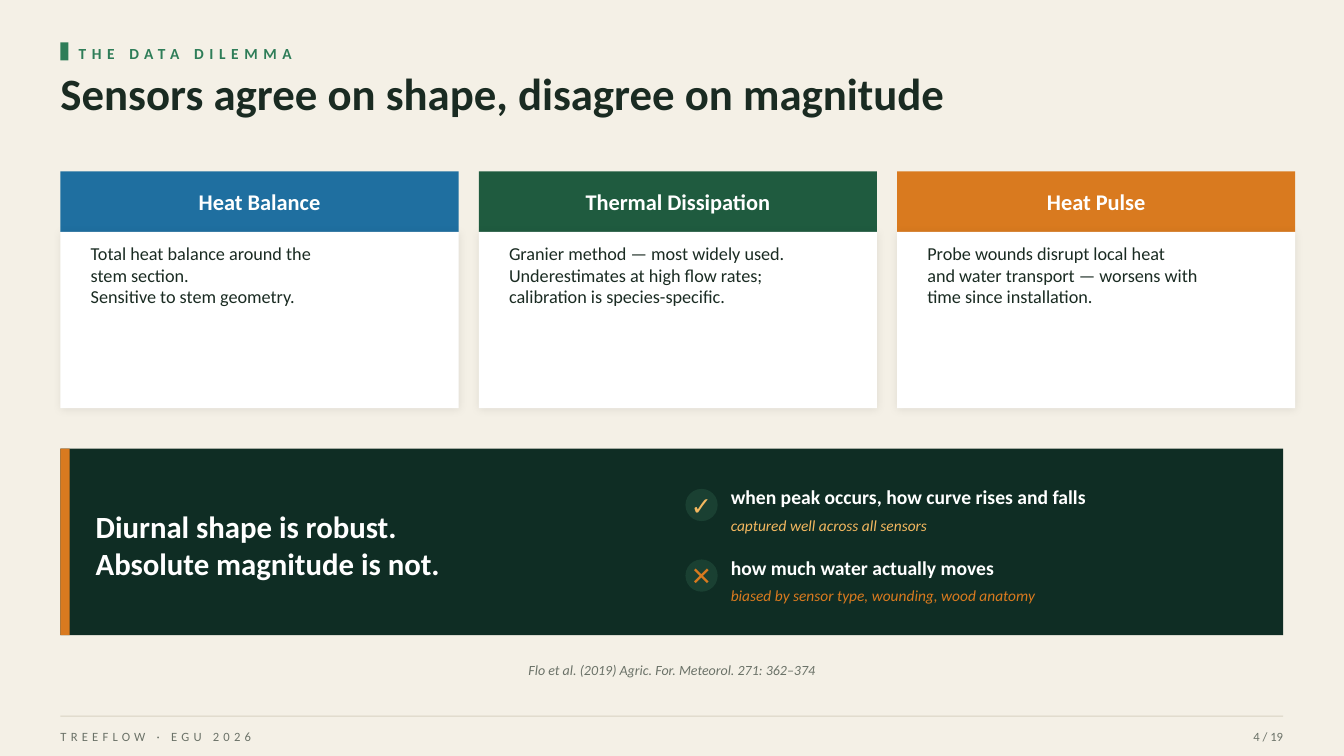
from lxml.etree import SubElement
from pptx import Presentation
from pptx.dml.color import RGBColor
from pptx.enum.shapes import MSO_SHAPE as Preset
from pptx.enum.text import MSO_ANCHOR as Anchor, MSO_AUTO_SIZE as AutoSize, PP_ALIGN as Align
from pptx.oxml.ns import qn
from pptx.util import Pt

COLOURS = {
    "paper": "F4F0E6", "ink": "1A2B22", "white": "FFFFFF", "leaf": "2E7D58",
    "blue": "1F6FA0", "forest": "1F5B3F", "orange": "D97A1F", "night": "0F2D24",
    "disc": "1A4032", "amber": "F4B860", "grey": "6B7268", "rule": "D8D2C2",
}
FONT = "Calibri"
LEFT, WIDTH = 43.2, 873.36


def add_block(left, top, width, height, colour, preset=Preset.RECTANGLE):
    block = page.shapes.add_shape(preset, Pt(left), Pt(top), Pt(width), Pt(height))
    block.shadow.inherit = False
    block.fill.solid()
    block.fill.fore_color.rgb = RGBColor.from_string(COLOURS[colour])
    block.line.fill.background()
    return block


def write(text, place=None, box=None, size=13, colour="ink", bold=False, italic=False,
          align=Align.LEFT, anchor=Anchor.MIDDLE, tracking=None):
    if box is None:
        box = page.shapes.add_textbox(*map(Pt, place))
    frame = box.text_frame
    frame.text = text
    frame.word_wrap = True
    frame.auto_size = AutoSize.NONE
    frame.vertical_anchor = anchor
    frame.margin_left = frame.margin_right = frame.margin_top = frame.margin_bottom = 0
    for para in frame.paragraphs:
        para.alignment = align
        for span in para.runs:
            span.font.name = FONT
            span.font.size = Pt(size)
            span.font.bold = bold
            span.font.italic = italic
            span.font.color.rgb = RGBColor.from_string(COLOURS[colour])
            if tracking:
                span.font._element.set("spc", str(tracking * 100))


deck = Presentation()
deck.slide_width, deck.slide_height = Pt(960), Pt(540)
page = deck.slides.add_slide(deck.slide_layouts[5])
page.background.fill.solid()
page.background.fill.fore_color.rgb = RGBColor.from_string(COLOURS["paper"])

add_block(LEFT, 30.24, 5.76, 12.96, "leaf")
write("THE DATA DILEMMA", (56.16, 28.8, 432, 18), size=11, colour="leaf", bold=True, tracking=4)
title = page.shapes.title
title.left, title.top, title.width, title.height = map(Pt, (LEFT, 46.8, 864, 61.2))
write("Sensors agree on shape, disagree on magnitude", box=title, size=32, bold=True, anchor=Anchor.TOP)

CARD_WIDTH, CARD_GAP, CARD_INSET = 284.4, 14.4, 21.6
cards = [
    ("Heat Balance", "blue",
     "Total heat balance around the\nstem section.\nSensitive to stem geometry."),
    ("Thermal Dissipation", "forest",
     "Granier method — most widely used.\nUnderestimates at high flow rates;\ncalibration is species-specific."),
    ("Heat Pulse", "orange",
     "Probe wounds disrupt local heat\nand water transport — worsens with\ntime since installation."),
]
for index, (method, colour, details) in enumerate(cards):
    left = LEFT + index * (CARD_WIDTH + CARD_GAP)
    header = add_block(left, 122.4, CARD_WIDTH, 43.2, colour)
    write(method, box=header, size=16, colour="white", bold=True, align=Align.CENTER)
    card = add_block(left, 165.6, CARD_WIDTH, 126, "white")
    effects = card._element.spPr.find(qn("a:effectLst"))
    shadow = SubElement(effects, qn("a:outerShdw"), blurRad=str(Pt(6)), dist=str(Pt(1)),
                        dir="5400000", algn="bl", rotWithShape="0")
    tint = SubElement(shadow, qn("a:srgbClr"), val="000000")
    SubElement(tint, qn("a:alpha"), val="8000")
    write(details, (left + CARD_INSET, 172.8, CARD_WIDTH - 2 * CARD_INSET, 111.6), anchor=Anchor.TOP)

add_block(LEFT, 320.4, WIDTH, 133.2, "night")
add_block(LEFT, 320.4, 6.48, 133.2, "orange")
write("Diurnal shape is robust.\nAbsolute magnitude is not.", (68.4, 345.6, 360, 86.4),
      size=22, colour="white", bold=True)

findings = [
    ("✓", "amber", "when peak occurs, how curve rises and falls", "captured well across all sensors"),
    ("✕", "orange", "how much water actually moves", "biased by sensor type, wounding, wood anatomy"),
]
for index, (mark, colour, claim, verdict) in enumerate(findings):
    top = 349.2 + index * 50.4
    add_block(489.6, top, 23.04, 23.04, "disc", Preset.OVAL)
    write(mark, (489.6, top - 2.88, 23.04, 28.8), size=18, colour=colour, bold=True, align=Align.CENTER)
    write(claim, (522, top - 5.76, 403.2, 23.04), size=14, colour="white", bold=True)
    write(verdict, (522, top + 15.84, 403.2, 20.16), size=11, colour=colour, italic=True)

write("Flo et al. (2019) Agric. For. Meteorol. 271: 362–374", (LEFT, 468, WIDTH, 21.6),
      size=10, colour="grey", italic=True, align=Align.CENTER)
add_block(LEFT, 511.2, WIDTH, 0.72, "rule")
write("TREEFLOW · EGU 2026", (LEFT, 516.96, 432, 18), size=9, colour="grey", tracking=3)
write("4 / 19", (801.36, 516.96, 115.2, 18), size=9, colour="grey", align=Align.RIGHT)

deck.save("out.pptx")
